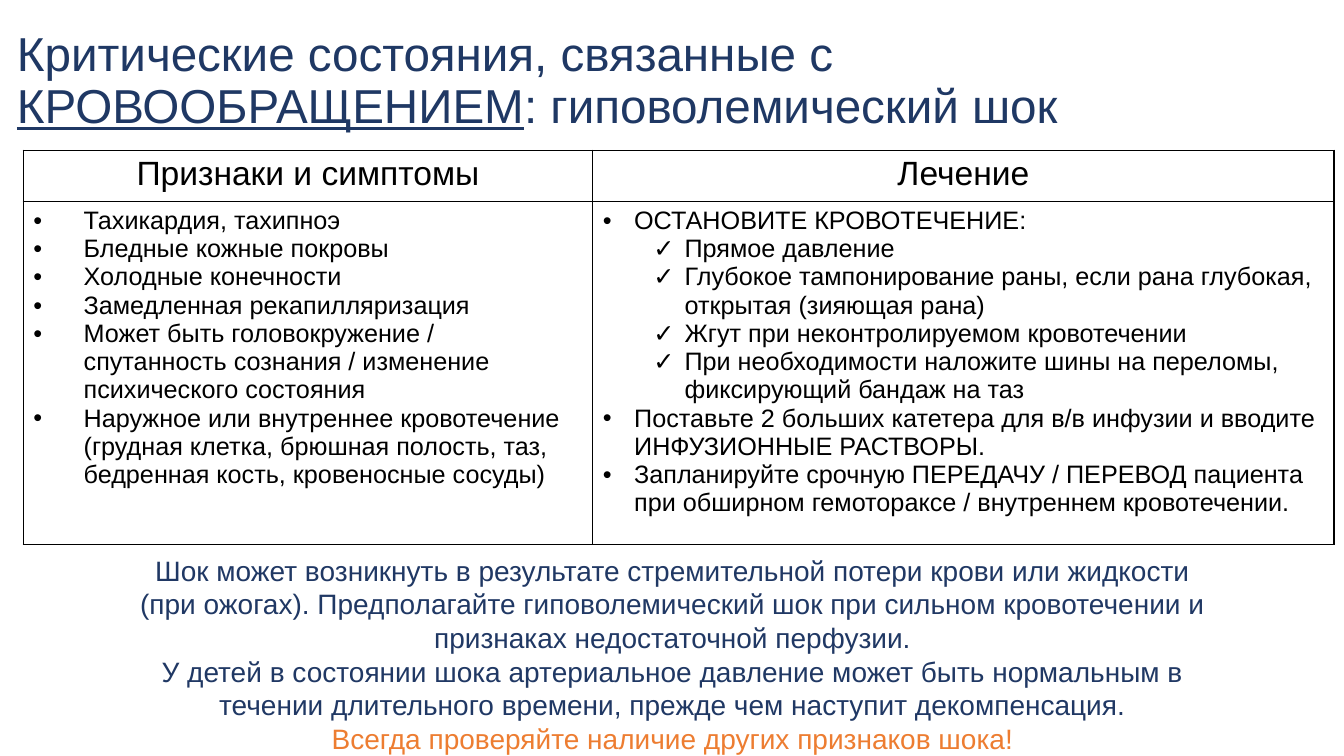
from lxml.etree import SubElement as Sub
from pptx import Presentation
from pptx.dml.color import RGBColor as RGB
from pptx.enum.text import MSO_ANCHOR as Anchor, PP_ALIGN as Align
from pptx.oxml.ns import qn
from pptx.util import Inches, Pt

HUES = {"title": "1F3864", "note": "203864", "warn": "ED7D31", "black": "000000"}
FONT = "Arial"

TITLE = [
    ("Критические состояния, связанные с ", False),
    ("КРОВООБРАЩЕНИЕМ", True),
    (": гиповолемический шок", False),
]
HEADS = ["Признаки и симптомы", "Лечение"]
SIGNS = [
    (0, "Тахикардия, тахипноэ"),
    (0, "Бледные кожные покровы"),
    (0, "Холодные конечности"),
    (0, "Замедленная рекапилляризация"),
    (0, "Может быть головокружение / спутанность сознания / изменение психического состояния"),
    (0, "Наружное или внутреннее кровотечение (грудная клетка, брюшная полость, таз, "
        "бедренная кость, кровеносные сосуды)"),
]
CARE = [
    (0, "ОСТАНОВИТЕ КРОВОТЕЧЕНИЕ:"),
    (1, "Прямое давление"),
    (1, "Глубокое тампонирование раны, если рана глубокая, открытая (зияющая рана)"),
    (1, "Жгут при неконтролируемом кровотечении"),
    (1, "При необходимости наложите шины на переломы, фиксирующий бандаж на таз"),
    (0, "Поставьте 2 больших катетера для в/в инфузии и вводите ИНФУЗИОННЫЕ РАСТВОРЫ."),
    (0, "Запланируйте срочную ПЕРЕДАЧУ / ПЕРЕВОД пациента при обширном гемотораксе / "
        "внутреннем кровотечении."),
]
LISTS = [(SIGNS, 0.5), (CARE, 0.31)]
NOTES = [
    ("Шок может возникнуть в результате стремительной потери крови или жидкости "
     "(при ожогах). Предполагайте гиповолемический шок при сильном кровотечении и "
     "признаках недостаточной перфузии.", "note"),
    ("У детей в состоянии шока артериальное давление может быть нормальным в течении "
     "длительного времени, прежде чем наступит декомпенсация.", "note"),
    ("Всегда проверяйте наличие других признаков шока!", "warn"),
]
COLS = [5.65, 7.35]
ROWS = [0.51, 3.13]
MARKS = ["•", "✓"]


def style(para, size, hue, align=Align.LEFT):
    para.alignment = align
    font = para.font
    font.name, font.size = FONT, Pt(size)
    font.color.rgb = RGB.from_string(HUES[hue])


def lines(frame, items):
    for i, item in enumerate(items):
        yield (frame.add_paragraph() if i else frame.paragraphs[0]), item


def bullet(para, level, hang):
    para.level = level
    props = para._p.get_or_add_pPr()
    props.set("marL", str(Inches(hang + level * 0.5)))
    props.set("indent", str(-Inches(hang)))
    tint = Sub(props, qn("a:buClr"))
    Sub(tint, qn("a:srgbClr"), val=HUES["black"])
    Sub(props, qn("a:buFont"), typeface=FONT)
    Sub(props, qn("a:buChar"), char=MARKS[level])


def border(cell):
    props = cell._tc.get_or_add_tcPr()
    for side in ("lnL", "lnR", "lnT", "lnB"):
        line = Sub(props, qn("a:" + side), w=str(Pt(1)))
        fill = Sub(line, qn("a:solidFill"))
        Sub(fill, qn("a:srgbClr"), val=HUES["black"])
    cell.fill.background()


def textbox(slide, *area):
    frame = slide.shapes.add_textbox(*map(Inches, area)).text_frame
    frame.word_wrap = True
    return frame


def main():
    deck = Presentation()
    deck.slide_width, deck.slide_height = Inches(13.33), Inches(7.5)
    slide = deck.slides.add_slide(deck.slide_layouts[6])

    frame = textbox(slide, 0.07, 0.09, 12.22, 1.45)
    frame.vertical_anchor = Anchor.MIDDLE
    para = frame.paragraphs[0]
    para.line_spacing = 0.9
    style(para, 34, "title")
    for text, under in TITLE:
        run = para.add_run()
        run.text = text
        if under:
            run.font.underline = True

    area = map(Inches, (0.23, 1.49, sum(COLS), sum(ROWS)))
    table = slide.shapes.add_table(len(ROWS), len(COLS), *area).table
    table.first_row = table.horz_banding = False
    for row, high in zip(table.rows, ROWS):
        row.height = Inches(high)
    for c, (wide, head, (items, hang)) in enumerate(zip(COLS, HEADS, LISTS)):
        table.columns[c].width = Inches(wide)
        top, body = table.cell(0, c), table.cell(1, c)
        border(top)
        border(body)
        top.text = head
        style(top.text_frame.paragraphs[0], 24, "black", Align.CENTER)
        for para, (level, text) in lines(body.text_frame, items):
            para.text = text
            bullet(para, level, hang)
            style(para, 18, "black")

    frame = textbox(slide, 1.18, 5.44, 10.98, 2.12)
    for para, (text, hue) in lines(frame, NOTES):
        para.text = text
        style(para, 20, hue, Align.CENTER)

    deck.save("out.pptx")


if __name__ == "__main__":
    main()
